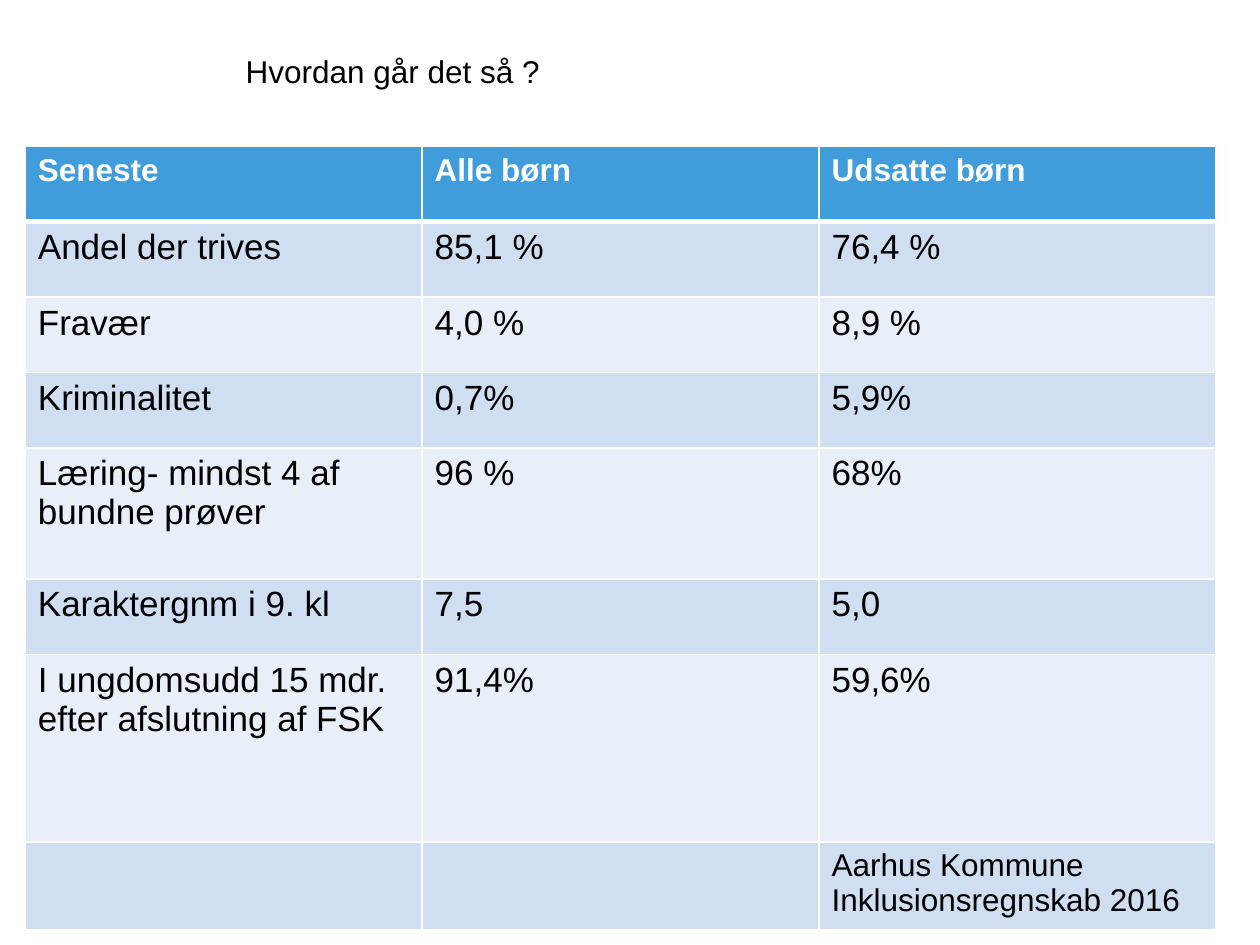
import lxml.etree
import pptx
import pptx.dml.color
import pptx.enum.text
import pptx.oxml.ns
import pptx.util

Cm = pptx.util.Cm
Pt = pptx.util.Pt
RGBColor = pptx.dml.color.RGBColor
qn = pptx.oxml.ns.qn

WHITE = RGBColor(0xFF, 0xFF, 0xFF)
BLACK = RGBColor(0x00, 0x00, 0x00)
HEADER_BLUE = RGBColor(0x40, 0x9C, 0xDA)
BANDS = [RGBColor(0xE8, 0xEF, 0xF8), RGBColor(0xCF, 0xDE, 0xF1)]

ROWS = [
    ("Seneste", "Alle børn", "Udsatte børn"),
    ("Andel der trives", "85,1 %", "76,4 %"),
    ("Fravær", "4,0 %", "8,9 %"),
    ("Kriminalitet", "0,7%", "5,9%"),
    ("Læring- mindst 4 af bundne prøver", "96 %", "68%"),
    ("Karaktergnm i 9. kl", "7,5", "5,0"),
    ("I ungdomsudd 15 mdr. efter afslutning af FSK", "91,4%", "59,6%"),
    ("", "", "Aarhus Kommune Inklusionsregnskab 2016"),
]
HEIGHTS = [1.52, 1.52, 1.52, 1.52, 2.64, 1.52, 3.78, 1.65]


def write(tf, text, size=20, color=BLACK, bold=False):
    p = tf.paragraphs[0]
    p.alignment = pptx.enum.text.PP_ALIGN.LEFT
    p.font.size = Pt(size)
    if text:
        r = p.add_run()
        r.text = text
        r.font.name = "Arial"
        r.font.size = Pt(size)
        r.font.bold = bold
        r.font.color.rgb = color


def add_border(cell, side, width):
    """Draw one white edge; call before the cell gets its fill."""
    tc_pr = cell._tc.get_or_add_tcPr()
    ln = lxml.etree.SubElement(tc_pr, qn(f"a:ln{side}"), w=str(Pt(width)))
    fill = lxml.etree.SubElement(ln, qn("a:solidFill"))
    lxml.etree.SubElement(fill, qn("a:srgbClr"), val=str(WHITE))


prs = pptx.Presentation()
prs.slide_width = Cm(25.4)
prs.slide_height = Cm(19.05)
s = prs.slides.add_slide(prs.slide_layouts[5])

title = s.shapes.title
title.left, title.top, title.width, title.height = Cm(4.7), Cm(0.92), Cm(6.5), Cm(1.02)
tf = title.text_frame
tf.word_wrap = False
tf.auto_size = pptx.enum.text.MSO_AUTO_SIZE.SHAPE_TO_FIT_TEXT
tf.vertical_anchor = pptx.enum.text.MSO_ANCHOR.TOP
write(tf, "Hvordan går det så ?", size=18)

table = s.shapes.add_table(len(ROWS), 3, Cm(0.51), Cm(2.95), Cm(24), Cm(sum(HEIGHTS))).table
for column in table.columns:
    column.width = Cm(8)

for i, (texts, height) in enumerate(zip(ROWS, HEIGHTS)):
    table.rows[i].height = Cm(height)
    header = i == 0
    last = i == len(ROWS) - 1
    for j, text in enumerate(texts):
        cell = table.cell(i, j)
        for side in "LRTB":
            under_header = (header and side == "B") or (i == 1 and side == "T")
            add_border(cell, side, 3 if under_header else 1)
        cell.fill.solid()
        cell.fill.fore_color.rgb = HEADER_BLUE if header else BANDS[i % 2]
        write(cell.text_frame, text, size=18 if header or last else 20,
              color=WHITE if header else BLACK, bold=header)

prs.save("out.pptx")
